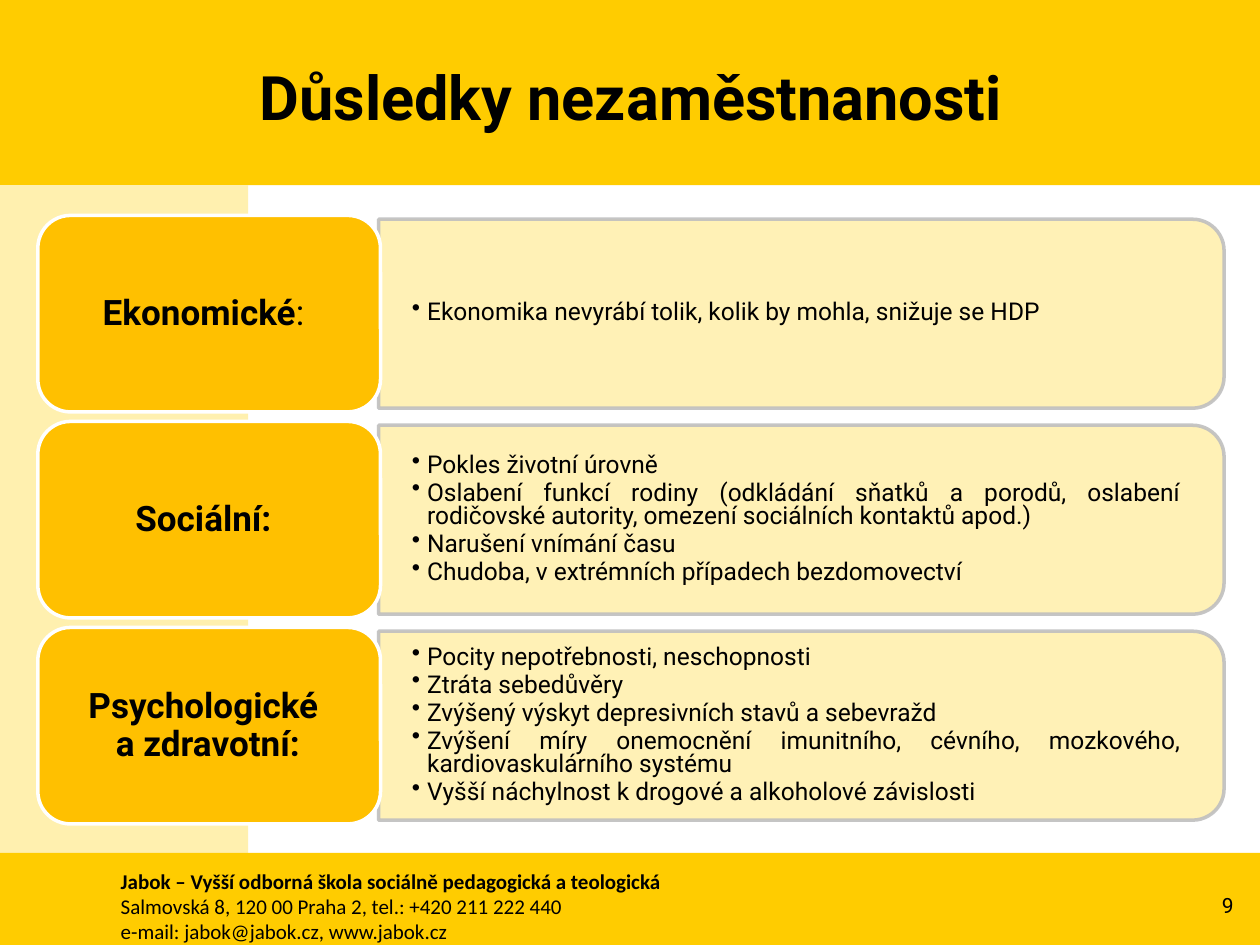
import pptx
import pptx.util
import pptx.dml.color
import pptx.enum.shapes
import pptx.enum.text
import pptx.oxml
import pptx.oxml.ns

Inches, Pt = pptx.util.Inches, pptx.util.Pt
SHAPE = pptx.enum.shapes.MSO_SHAPE
ALIGN = pptx.enum.text.PP_ALIGN
ANCHOR = pptx.enum.text.MSO_ANCHOR

COLORS = {
    "band": "FFCC00",
    "pale": "FFF0AF",
    "label": "FFC000",
    "border": "BFBFBF",
    "white": "FFFFFF",
    "text": "000000",
}
COLS, ROWS = 100, 75  # grid cells of a tenth of an inch

# Each topic: label lines as (bold, regular) pairs, then bullets
TOPICS = [
    ([("Ekonomické", ": ")],
     ["Ekonomika nevyrábí tolik, kolik by mohla, snižuje se HDP"]),
    ([("Sociální: ", "")],
     ["Pokles životní úrovně",
      "Oslabení funkcí rodiny (odkládání sňatků a porodů, oslabení rodičovské "
      "autority, omezení sociálních kontaktů apod.)",
      "Narušení vnímání času",
      "Chudoba, v extrémních případech bezdomovectví"]),
    ([("Psychologické ", ""), ("a zdravotní:", "")],
     ["Pocity nepotřebnosti, neschopnosti",
      "Ztráta sebedůvěry",
      "Zvýšený výskyt depresivních stavů a sebevražd",
      "Zvýšení míry onemocnění imunitního, cévního, mozkového, "
      "kardiovaskulárního systému",
      "Vyšší náchylnost k drogové a alkoholové závislosti"]),
]
FOOTER = [
    ("Jabok – Vyšší odborná škola sociálně pedagogická a teologická", ""),
    ("", "Salmovská 8, 120 00 Praha 2, tel.: +420 211 222 440"),
    ("", "e-mail: jabok@jabok.cz, www.jabok.cz"),
]


def rgb(name):
    return pptx.dml.color.RGBColor.from_string(COLORS[name])


def set_alpha(fill, percent):
    color = fill._xPr.find(".//" + pptx.oxml.ns.qn("a:srgbClr"))
    alpha = pptx.oxml.parse_xml(
        f'<a:alpha {pptx.oxml.ns.nsdecls("a")} val="{percent * 1000}"/>')
    color.append(alpha)


def add_bullet(p, indent):
    pPr = p._p.get_or_add_pPr()
    pPr.set("marL", str(Inches(indent)))
    pPr.set("indent", str(-Inches(indent)))
    pPr.append(pptx.oxml.parse_xml(
        f'<a:buChar {pptx.oxml.ns.nsdecls("a")} char="•"/>'))


def write(tf, lines, size, font="Roboto", align=ALIGN.LEFT, spacing=None,
          after=0, bullet=False):
    """Fill a text frame; each line is a (bold, regular) pair of texts."""
    for i, line in enumerate(lines):
        p = tf.paragraphs[0] if i == 0 else tf.add_paragraph()
        if bullet:
            add_bullet(p, 0.12)
        p.alignment = align
        if spacing:
            p.line_spacing = spacing
        p.space_after = Pt(after)
        for text, bold in zip(line, (True, False)):
            if text:
                r = p.add_run()
                r.text = text
                r.font.name, r.font.size, r.font.bold = font, Pt(size), bold
                r.font.color.rgb = rgb("text")


class Deck:
    def __init__(self):
        self.prs = pptx.Presentation()
        self.prs.slide_width, self.prs.slide_height = Inches(10), Inches(7.5)
        self.slide = self.prs.slides.add_slide(self.prs.slide_layouts[6])

    def cells(self, col, row, cols, rows):
        x, y = self.prs.slide_width / COLS, self.prs.slide_height / ROWS
        return [round(v) for v in (col * x, row * y, cols * x, rows * y)]

    def shape(self, kind, at, fill, line=None, alpha=None, rotation=0):
        sp = self.slide.shapes.add_shape(kind, *self.cells(*at))
        sp.shadow.inherit = False
        sp.rotation = rotation
        sp.fill.solid()
        sp.fill.fore_color.rgb = rgb(fill)
        if line:
            sp.line.color.rgb = rgb(line)
            sp.line.width = Pt(2)
        else:
            sp.line.fill.background()
        if alpha:
            set_alpha(sp.fill, alpha)
            set_alpha(sp.line.fill, alpha)

    def text(self, at, lines, size, anchor=ANCHOR.MIDDLE, inset=(0.1, 0.05),
             **style):
        tf = self.slide.shapes.add_textbox(*self.cells(*at)).text_frame
        tf.word_wrap = True
        tf.vertical_anchor = anchor
        tf.margin_left = tf.margin_right = Inches(inset[0])
        tf.margin_top = tf.margin_bottom = Inches(inset[1])
        write(tf, lines, size, **style)

    def background(self):
        self.shape(SHAPE.RECTANGLE, (0, 0, COLS, 14.7), "band")
        self.shape(SHAPE.RECTANGLE, (0, 14.7, 19.7, 60.3), "pale")
        self.shape(SHAPE.RECTANGLE, (0, 67.7, COLS, 7.3), "band")

    def topic(self, middle, label, bullets):
        """Draw a label and its panel, both centred on the given row."""
        # The panel is an upright shape turned a quarter, so its sides swap
        self.shape(SHAPE.ROUND_2_SAME_RECTANGLE,
                   (56.1, middle - 33.55, 15, 67.1), "pale", "border",
                   alpha=90, rotation=90)
        self.text((30, middle - 6.75, 66.4, 13.5),
                  [("", bullet) for bullet in bullets], 14,
                  inset=(0.27, 0.14), align=ALIGN.JUSTIFY, spacing=0.8,
                  after=2.5, bullet=True)
        self.shape(SHAPE.ROUNDED_RECTANGLE, (3, middle - 7.8, 27.2, 15.6),
                   "label", "white")
        self.text((3.7, middle - 7.05, 25.6, 14.1), label, 20,
                  inset=(0.08, 0.04), align=ALIGN.CENTER, spacing=0.9)


def main():
    deck = Deck()
    deck.background()
    deck.text((8.6, 68.4, 81.9, 7.1), FOOTER, 12, anchor=ANCHOR.TOP,
              font="Calibri")
    deck.text((92.6, 69.8, 6.3, 4), [("", "9")], 12, align=ALIGN.RIGHT)
    deck.text((5.1, 1.4, 90, 12.5), [("Důsledky nezaměstnanosti", "")], 35,
              align=ALIGN.CENTER)
    for i, (label, bullets) in enumerate(TOPICS):
        deck.topic(24.9 + i * 16.35, label, bullets)
    deck.prs.save("out.pptx")


if __name__ == "__main__":
    main()
